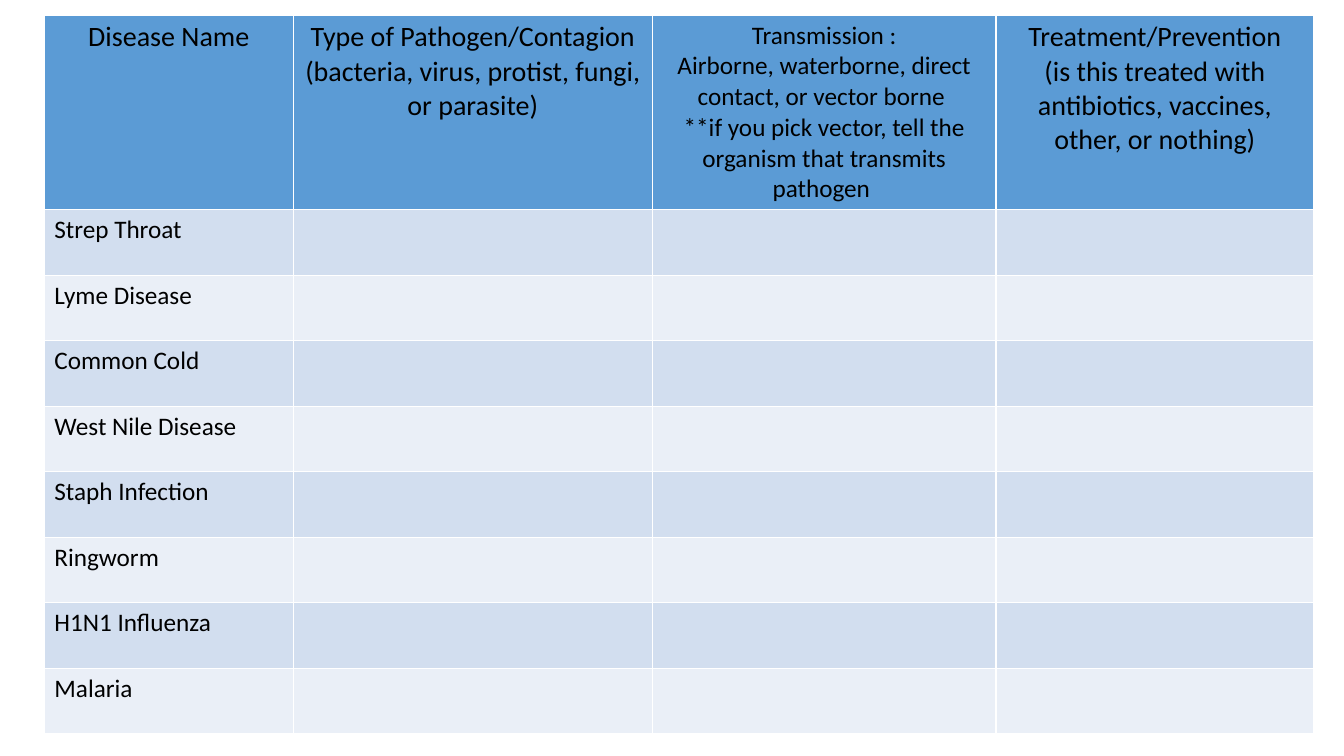
from dataclasses import dataclass

from pptx import Presentation
from pptx.dml.color import RGBColor
from pptx.enum.text import PP_ALIGN
from pptx.table import _Cell
from pptx.util import Inches, Pt

CENTER, LEFT = PP_ALIGN.CENTER, PP_ALIGN.LEFT
SLIDE_W, SLIDE_H = Inches(13.33), Inches(7.5)
FONT, TEXT_COLOR = "Calibri", "000000"
HEADER_FILL, BAND_FILLS = "5B9BD5", ("D2DEEF", "EAEFF7")
BODY_SIZE = 18

# Percent of the slide's width or height
TABLE_LEFT, TABLE_TOP = 3.3, 2
HEADER_HEIGHT, ROW_HEIGHT = 25.6, 8.67


@dataclass(frozen=True)
class Column:
    width: float
    heading: str
    size: int = 20


COLUMNS = (
    Column(18.53, "Disease Name"),
    Column(26.71, "Type of Pathogen/Contagion\n"
                  "(bacteria, virus, protist, fungi, or parasite)"),
    Column(25.58, "Transmission :\n"
                  "Airborne, waterborne, direct contact, or vector borne \n"
                  "**if you pick vector, tell the organism that transmits pathogen ", 18),
    Column(23.63, "Treatment/Prevention\n"
                  "(is this treated with antibiotics, vaccines, other, or nothing)"),
)
DISEASES = ("Strep Throat", "Lyme Disease", "Common Cold", "West Nile Disease",
            "Staph Infection", "Ringworm", "H1N1 Influenza", "Malaria")


def color(value: str) -> RGBColor:
    return RGBColor.from_string(value)


def across(percent: float) -> int:
    return round(SLIDE_W * percent / 100)


def down(percent: float) -> int:
    return round(SLIDE_H * percent / 100)


def fill_cell(cell: _Cell, fill: str) -> None:
    cell.fill.solid()
    cell.fill.fore_color.rgb = color(fill)


def write_cell(cell: _Cell, text: str, size: int, align: PP_ALIGN) -> None:
    cell.text_frame.text = text
    for p in cell.text_frame.paragraphs:
        p.alignment = align
        for r in p.runs:
            r.font.name = FONT
            r.font.size = Pt(size)
            r.font.bold = False
            r.font.color.rgb = color(TEXT_COLOR)


def main() -> None:
    prs = Presentation()
    prs.slide_width, prs.slide_height = SLIDE_W, SLIDE_H
    s = prs.slides.add_slide(prs.slide_layouts[6])

    table_width = sum(column.width for column in COLUMNS)
    table_height = HEADER_HEIGHT + ROW_HEIGHT * len(DISEASES)
    table = s.shapes.add_table(
        len(DISEASES) + 1, len(COLUMNS), across(TABLE_LEFT), down(TABLE_TOP),
        across(table_width), down(table_height)).table

    table.rows[0].height = down(HEADER_HEIGHT)
    for i, column in enumerate(COLUMNS):
        table.columns[i].width = across(column.width)
        fill_cell(table.cell(0, i), HEADER_FILL)
        write_cell(table.cell(0, i), column.heading, column.size, CENTER)

    for i, disease in enumerate(DISEASES):
        row = table.rows[i + 1]
        row.height = down(ROW_HEIGHT)
        for cell in row.cells:
            fill_cell(cell, BAND_FILLS[i % 2])
        write_cell(row.cells[0], disease, BODY_SIZE, LEFT)

    prs.save("out.pptx")


if __name__ == "__main__":
    main()
